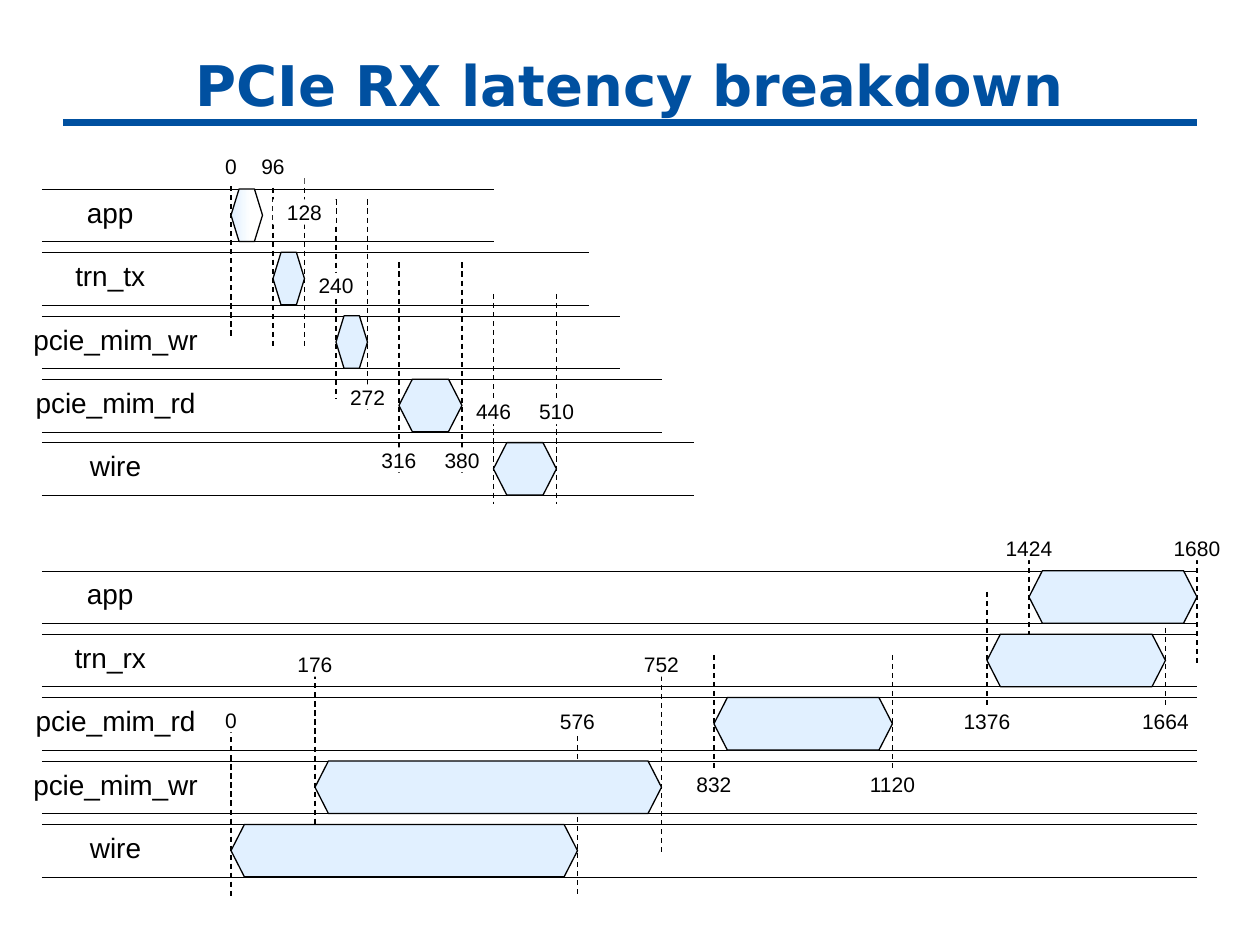
from lxml.etree import SubElement
from pptx import Presentation
from pptx.dml.color import RGBColor
from pptx.enum.dml import MSO_LINE as Dash
from pptx.enum.shapes import MSO_CONNECTOR as Connector, MSO_SHAPE as Shape
from pptx.enum.text import MSO_ANCHOR as Anchor, PP_ALIGN as Align
from pptx.oxml.ns import qn
from pptx.util import Inches, Pt

BLUE = RGBColor(0x00, 0x50, 0xA0)
PALE = RGBColor(0xE1, 0xF0, 0xFF)
BLACK = RGBColor(0, 0, 0)
WHITE = RGBColor(0xFF, 0xFF, 0xFF)

UNIT = 1 / 12
LANE_PITCH = 6.04
LANE_HEIGHT = 5
LANE_START = 4
LABEL_HEIGHT = 2.4

# Lane: name, name column, name width, end column, bar start, bar end
TX_LANES = [
    ("app", 5, 11, 47, 22, 25),
    ("trn_tx", 5, 11, 56, 26, 29),
    ("pcie_mim_wr", 0, 22, 59, 32, 35),
    ("pcie_mim_rd", 0, 22, 63, 38, 44),
    ("wire", 1, 20, 66, 47, 53),
]
# Mark: time, column, first row, last row, label row, label width, label height
TX_MARKS = [
    ("0", 22, -2, 14.3, -4, 6, 3.6),
    ("96", 26, -1, 15, -4, 6, 3.6),
    ("128", 29, -1, 15, 1, 6, LABEL_HEIGHT),
    ("240", 32, 1, 20, 8, 4, LABEL_HEIGHT),
    ("272", 35, 1, 21, 18.6, 4, LABEL_HEIGHT),
    ("316", 38, 7, 27, 24.6, 6, LABEL_HEIGHT),
    ("380", 44, 7, 27, 24.6, 4, LABEL_HEIGHT),
    ("446", 47, 10, 30, 20, 4, LABEL_HEIGHT),
    ("510", 53, 10, 30, 20, 4, LABEL_HEIGHT),
]
RX_LANES = [
    ("app", 5, 11, 114, 98, 114),
    ("trn_rx", 5, 11, 114, 94, 111),
    ("pcie_mim_rd", 0, 22, 114, 68, 85),
    ("pcie_mim_wr", 0, 22, 114, 30, 63),
    ("wire", 1, 20, 114, 22, 55),
]
RX_MARKS = [
    ("0", 22, 15, 31, 13, 6, LABEL_HEIGHT),
    ("176", 30, 9, 27, 7.7, 6, LABEL_HEIGHT),
    ("576", 55, 14, 31, 13.1, 6, LABEL_HEIGHT),
    ("752", 63, 10, 27, 7.7, 6, LABEL_HEIGHT),
    ("832", 68, 8, 21, 19.1, 6, LABEL_HEIGHT),
    ("1120", 85, 8, 21, 19.1, 6, LABEL_HEIGHT),
    ("1376", 94, 2, 15.5, 13.1, 6, LABEL_HEIGHT),
    ("1424", 98, -2, 9, -3.4, 6, LABEL_HEIGHT),
    ("1664", 111, 2, 15.5, 13.1, 6, LABEL_HEIGHT),
    ("1680", 114, -2, 9, -3.4, 6, LABEL_HEIGHT),
]


def write_text(shape, text, size, font="Arial", color=BLACK, bold=False,
               anchor=Anchor.MIDDLE, inset=0):
    frame = shape.text_frame
    frame.word_wrap = True
    frame.vertical_anchor = anchor
    frame.margin_left = frame.margin_right = Inches(inset)
    frame.margin_top = frame.margin_bottom = Inches(inset / 2)
    para = frame.paragraphs[0]
    para.alignment = Align.CENTER
    span = para.add_run()
    span.text = text
    span.font.name = font
    span.font.size = Pt(size)
    span.font.bold = bold
    span.font.color.rgb = color


def draw_line(shapes, start, end, width, color=BLACK, dash=None):
    line = shapes.add_connector(Connector.STRAIGHT, *map(Inches, start + end))
    line.line.color.rgb = color
    line.line.width = Pt(width)
    if dash is not None:
        line.line.dash_style = dash
    SubElement(line._element.spPr, qn("a:effectLst"))


def draw_bar(shapes, box, fade):
    bar = shapes.add_shape(Shape.LEFT_RIGHT_ARROW, *map(Inches, box))
    bar.shadow.inherit = False
    bar.adjustments[0] = 1
    bar.adjustments[1] = 0.256
    bar.line.color.rgb = BLACK
    bar.line.width = Pt(0.75)
    if fade:
        bar.fill.gradient()
        bar.fill.gradient_angle = 0
        for stop, color, place in zip(bar.fill.gradient_stops, (PALE, WHITE), (0, 0.65)):
            stop.color.rgb = color
            stop.position = place
    else:
        bar.fill.solid()
        bar.fill.fore_color.rgb = PALE


def draw_title(page, box, text):
    left, top, width, height = box
    title = page.shapes.title
    title.left, title.top, title.width, title.height = map(Inches, box)
    write_text(title, text, 32, font="DejaVu Sans", color=BLUE, bold=True, inset=0.1)
    rule = top + height - 0.03
    draw_line(page.shapes, (left, rule), (left + width, rule), 4, color=BLUE)


def draw_timeline(page, left, top, lanes, marks, fade_first=False):
    shapes = page.shapes.add_group_shape().shapes

    def at(column, row):
        return left + column * UNIT, top + row * UNIT

    def area(column, row, width, height):
        return at(column, row) + (width * UNIT, height * UNIT)

    for index, (name, column, width, end, _, _) in enumerate(lanes):
        row = index * LANE_PITCH
        label = shapes.add_textbox(*map(Inches, area(column, row, width, 4.4)))
        write_text(label, name, 16, anchor=Anchor.TOP, inset=0.1)
        for edge in (row, row + LANE_HEIGHT):
            draw_line(shapes, at(LANE_START, edge), at(end, edge), 0.25, dash=Dash.ROUND_DOT)

    for _, column, first, last, _, _, _ in marks:
        draw_line(shapes, at(column, first), at(column, last), 0.75, dash=Dash.DASH)

    for index, (_, _, _, _, start, stop) in enumerate(lanes):
        box = area(start, index * LANE_PITCH, stop - start, LANE_HEIGHT)
        draw_bar(shapes, box, fade_first and index == 0)

    for time, column, _, _, row, width, height in marks:
        box = area(column - width / 2, row, width, height)
        label = shapes.add_shape(Shape.RECTANGLE, *map(Inches, box))
        label.shadow.inherit = False
        label.fill.solid()
        label.fill.fore_color.rgb = WHITE
        label.line.fill.background()
        write_text(label, time, 12)


def main():
    deck = Presentation()
    deck.slide_width, deck.slide_height = Inches(10), Inches(7.5)
    page = deck.slides.add_slide(deck.slide_layouts[5])
    draw_title(page, (0.5, 0.33, 9, 0.67), "PCIe RX latency breakdown")
    draw_timeline(page, 0, 1.5, TX_LANES, TX_MARKS, fade_first=True)
    draw_timeline(page, 0, 4.53, RX_LANES, RX_MARKS)
    deck.save("out.pptx")


if __name__ == "__main__":
    main()
